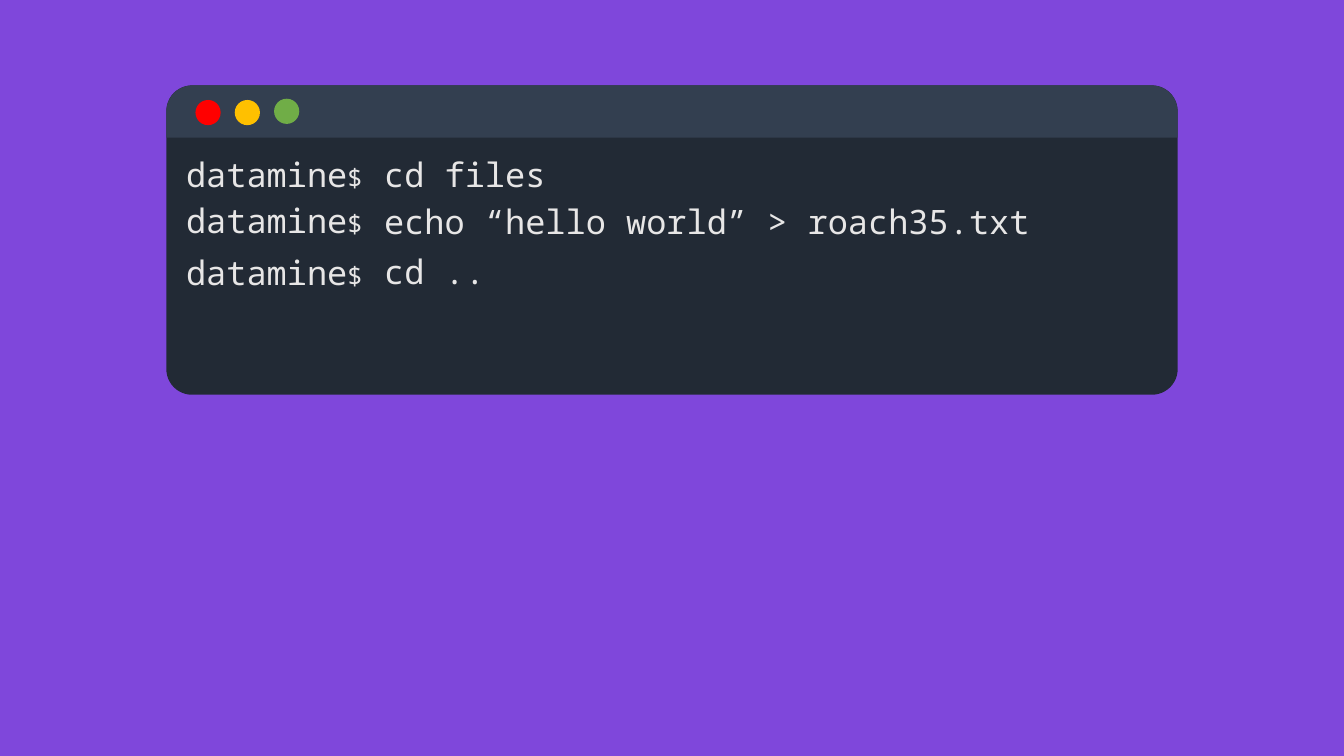
from pptx import Presentation
from pptx import util as u
from pptx.dml.color import RGBColor
from pptx.enum import shapes, text

Pt = u.Pt
COLORS = {
    "background": "7F47DB", "window": "222A35", "title_bar": "333F50",
    "close": "FF0000", "minimize": "FFC000", "zoom": "70AD47", "text": "E7E6E6",
}
FONT = "Noto Sans Mono"
# Command, prompt top and command top below the window's top edge
LINES = [
    ("cd files", 45.36, 45.36),
    ("echo “hello world” > roach35.txt", 78.5, 79.2),
    ("cd ..", 115.2, 114.5),
]


def rgb(name):
    return RGBColor.from_string(COLORS[name])


def add_panel(s, kind, box, color, adjustments=()):
    sp = s.shapes.add_shape(kind, *map(Pt, box))
    sp.shadow.inherit = False
    sp.fill.solid()
    sp.fill.fore_color.rgb = rgb(color)
    sp.line.fill.background()
    for i, value in enumerate(adjustments):
        sp.adjustments[i] = value


def add_text(s, box, runs):
    tf = s.shapes.add_textbox(*map(Pt, box)).text_frame
    frame_format = {"word_wrap": True, "auto_size": text.MSO_AUTO_SIZE.SHAPE_TO_FIT_TEXT}
    for name, value in frame_format.items():
        setattr(tf, name, value)
    p = tf.paragraphs[0]
    for words, size in runs:
        r = p.add_run()
        r.text = words
        for name, value in {"name": FONT, "size": Pt(size)}.items():
            setattr(r.font, name, value)
        r.font.color.rgb = rgb("text")


def add_window(s, left, top, width, height):
    # Window body and title bar
    kinds = shapes.MSO_SHAPE
    add_panel(s, kinds.ROUNDED_RECTANGLE, (left, top, width, height), "window", [0.083])
    add_panel(s, kinds.ROUND_2_SAME_RECTANGLE, (left, top, width, 37.4), "title_bar", [0.5, 0])

    # Window buttons
    for i, (color, drop) in enumerate([("close", 10.4), ("minimize", 10.4), ("zoom", 9.5)]):
        add_panel(s, kinds.OVAL, (left + 20.8 + 28.08 * i, top + drop, 18, 18), color)


def add_session(s, left, top, width):
    prompt_width = 141.5
    for command, prompt_drop, command_drop in LINES:
        add_text(s, (left, top + prompt_drop, prompt_width, 36), [("datamine", 24), ("$", 18)])
        add_text(s, (left + prompt_width, top + command_drop, width - prompt_width, 36),
                 [(command, 24)])


def main():
    prs = Presentation()
    prs.slide_width, prs.slide_height = Pt(960), Pt(540)
    s = prs.slides.add_slide(prs.slide_layouts[6])
    s.background.fill.solid()
    s.background.fill.fore_color.rgb = rgb("background")

    # Terminal window with its commands
    left, top, width, height = 118.8, 61, 722.4, 221
    add_window(s, left, top, width, height)
    add_session(s, left + 7, top, width - 14)
    prs.save("out.pptx")


if __name__ == "__main__":
    main()
